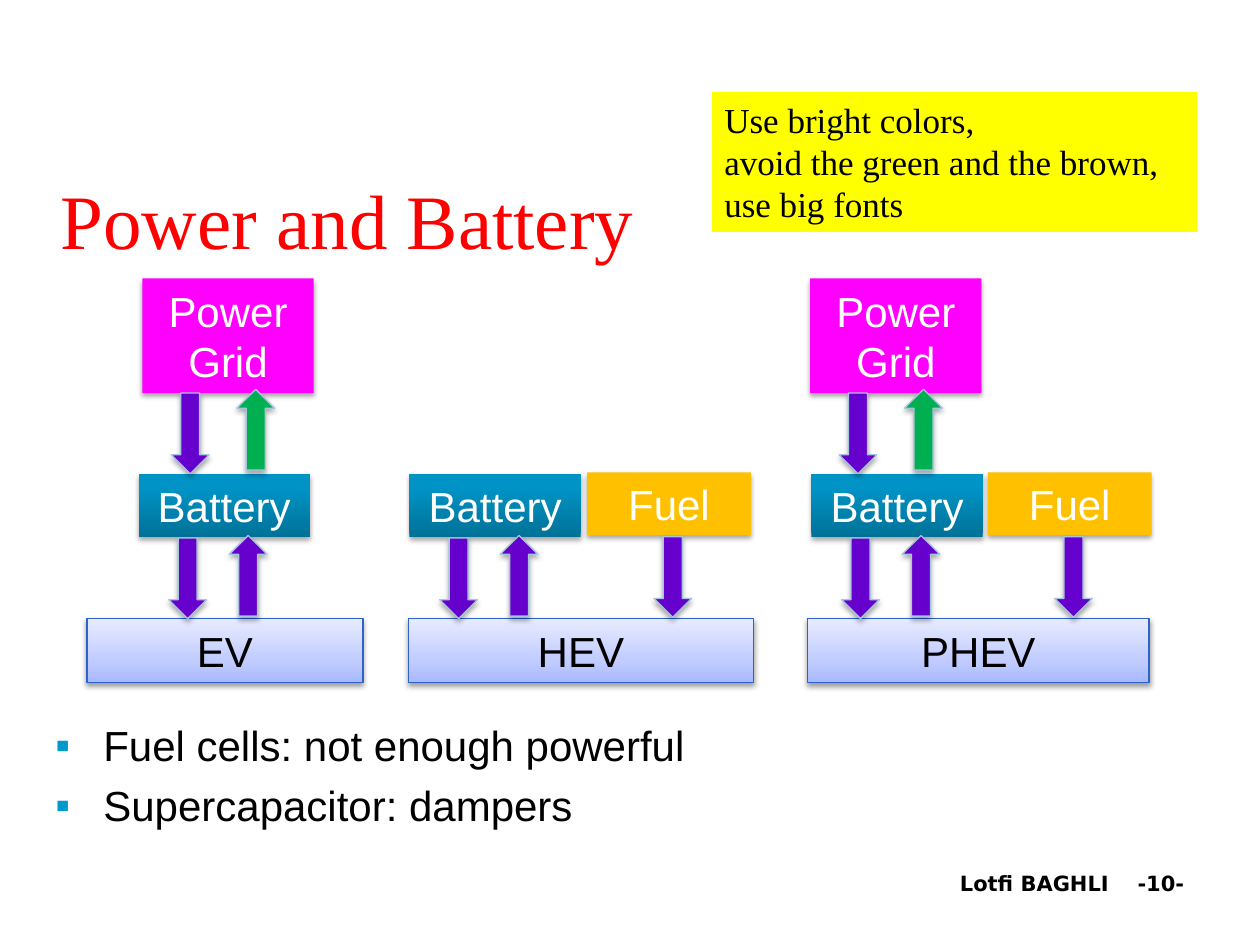
import copy

import pptx
import pptx.dml.color
import pptx.enum.shapes
import pptx.enum.text
import pptx.oxml
import pptx.oxml.ns
import pptx.util
from lxml import etree

RGB = pptx.dml.color.RGBColor
ALIGN = pptx.enum.text.PP_ALIGN
ANCHOR = pptx.enum.text.MSO_ANCHOR
SHAPE = pptx.enum.shapes.MSO_SHAPE
Pt = pptx.util.Pt
qn = pptx.oxml.ns.qn

BLACK = RGB(0x00, 0x00, 0x00)
WHITE = RGB(0xFF, 0xFF, 0xFF)
RED = RGB(0xFF, 0x00, 0x00)
YELLOW = RGB(0xFF, 0xFF, 0x00)
MAGENTA = RGB(0xFF, 0x00, 0xFF)
ORANGE = RGB(0xFF, 0xC0, 0x00)
PURPLE = RGB(0x66, 0x00, 0xCC)
GREEN = RGB(0x00, 0xB0, 0x50)
BULLET = RGB(0x00, 0x99, 0xCC)
BASE_EDGE = RGB(0x2E, 0x63, 0xCB)
ARROW_EDGE = RGB(0xA5, 0xC6, 0xDE)
TEAL = ((0, RGB(0x00, 0x72, 0x98)), (0.8, RGB(0x00, 0x94, 0xC6)),
        (1, RGB(0x00, 0x95, 0xC7)))
LAVENDER = ((0, RGB(0xA7, 0xB8, 0xFF)), (0.35, RGB(0xC1, 0xCC, 0xFF)),
            (1, RGB(0xE7, 0xEB, 0xFF)))

# The slide is a grid of 100 columns by 75 rows.
CELL = pptx.util.Inches(0.1)
COLS, ROWS = 100, 75

LABEL = {"name": "Arial", "size": Pt(24)}
TITLE = {"name": "Times New Roman", "size": Pt(44)}
NOTE = {"name": "Times New Roman", "size": Pt(20)}
FOOTER = {"name": "DejaVu Sans", "size": Pt(12), "bold": True}


def grid(*cells):
    return [round(c * CELL) for c in cells]


def put(sp, box):
    for name, value in zip(("left", "top", "width", "height"), grid(*box)):
        setattr(sp, name, value)


def write(sp, lines, font, color, align, anchor, gap=0):
    tf = sp.text_frame
    formats = {"word_wrap": True, "vertical_anchor": anchor,
               "auto_size": pptx.enum.text.MSO_AUTO_SIZE.NONE}
    for name, value in formats.items():
        setattr(tf, name, value)
    for i, line in enumerate(lines):
        p = tf.paragraphs[0] if i == 0 else tf.add_paragraph()
        p.alignment = align
        p.space_before = Pt(gap if i else 0)
        r = p.add_run()
        r.text = line
        for name, value in font.items():
            setattr(r.font, name, value)
        r.font.color.rgb = color
    return tf


def paint(sp, fill):
    """Fill with one colour, or with gradient stops that run upwards."""
    if isinstance(fill, RGB):
        sp.fill.solid()
        sp.fill.fore_color.rgb = fill
        return
    sp.fill.gradient()
    sp.fill.gradient_angle = 90
    stops = sp._element.spPr.find(".//" + qn("a:gsLst"))
    stops.append(copy.deepcopy(stops[0]))
    for stop, (position, color) in zip(sp.fill.gradient_stops, fill):
        stop.position = position
        stop.color.rgb = color


def cast_shadow(sp, alpha, distance):
    effects = sp._element.spPr.find(qn("a:effectLst"))
    shadow = etree.SubElement(effects, qn("a:outerShdw"), blurRad=str(Pt(3.1)),
                              dist=str(Pt(distance)), dir="5400000", rotWithShape="0")
    color = etree.SubElement(shadow, qn("a:srgbClr"), val=str(BLACK))
    etree.SubElement(color, qn("a:alpha"), val=str(alpha * 1000))


def add_block(s, kind, box, fill, edge=None, shadow=(35, 1.8)):
    sp = s.shapes.add_shape(kind, *grid(*box))
    paint(sp, fill)
    if edge is None:
        sp.line.fill.background()
    else:
        sp.line.color.rgb = edge
        sp.line.width = Pt(0.75)
    sp.shadow.inherit = False
    if shadow:
        cast_shadow(sp, *shadow)
    return sp


def add_label(s, box, text, fill, color=WHITE, **style):
    sp = add_block(s, SHAPE.RECTANGLE, box, fill, **style)
    write(sp, [text], LABEL, color, ALIGN.CENTER, ANCHOR.MIDDLE)


def add_arrow(s, x, y, up=False, fill=PURPLE):
    kind = SHAPE.UP_ARROW if up else SHAPE.DOWN_ARROW
    add_block(s, kind, (x, y, 3, 6.4), fill, ARROW_EDGE)


def add_vehicle(s, box, name, battery, power_grid=None, fuel=None):
    """Stack the sources over the vehicle bar; sources are columns from its left."""
    x, y, w, h = box
    bar = y + h - 5.1
    tier = bar - 11.5
    add_label(s, (x, bar, w, 5.1), name, LAVENDER, BLACK,
              edge=BASE_EDGE, shadow=(38, 1.6))
    add_label(s, (x + battery, tier, 13.6, 5), "Battery", TEAL)
    add_arrow(s, x + battery + 2.4, tier + 5.1)
    add_arrow(s, x + battery + 7.2, tier + 4.9, up=True)
    if fuel is not None:
        add_label(s, (x + fuel, tier - 0.1, 13, 5), "Fuel", ORANGE)
        add_arrow(s, x + fuel + 5.3, tier + 5)
    if power_grid is not None:
        add_label(s, (x + power_grid, y, 13.6, 9.1), "Power Grid", MAGENTA)
        add_arrow(s, x + power_grid + 2.3, y + 9.1)
        add_arrow(s, x + power_grid + 7.5, y + 8.8, up=True, fill=GREEN)


def add_title(s, box):
    sp = s.shapes.title
    put(sp, box)
    tf = write(sp, ["Power and Battery"], TITLE, RED, ALIGN.JUSTIFY, ANCHOR.TOP)
    tf.margin_top, = grid(1.2)


def add_bullets(s, box):
    sp = s.placeholders[1]
    put(sp, box)
    tf = write(sp, ["Fuel cells: not enough powerful", "Supercapacitor: dampers"],
               LABEL, BLACK, ALIGN.JUSTIFY, ANCHOR.TOP, gap=5.5)
    tf.margin_top, = grid(0.8)
    indent, = grid(3.8)
    for p in tf.paragraphs:
        pPr = p._p.get_or_add_pPr()
        pPr.set("marL", str(indent))
        pPr.set("indent", str(-indent))
        color = etree.SubElement(pPr, qn("a:buClr"))
        etree.SubElement(color, qn("a:srgbClr"), val=str(BULLET))
        etree.SubElement(pPr, qn("a:buFont"), typeface="Arial")
        etree.SubElement(pPr, qn("a:buChar"), char="▪")


def add_note(s, box):
    sp = add_block(s, SHAPE.RECTANGLE, box, YELLOW, shadow=None)
    write(sp, ["Use bright colors,", "avoid the green and the brown,", "use big fonts"],
          NOTE, BLACK, ALIGN.LEFT, ANCHOR.MIDDLE)


def add_footer(s, box):
    sp = s.shapes.add_textbox(*grid(*box))
    tf = write(sp, ["\tLotfi BAGHLI\t-10-"], FOOTER, BLACK, ALIGN.LEFT, ANCHOR.TOP)
    tabs = etree.SubElement(tf.paragraphs[0]._p.get_or_add_pPr(), qn("a:tabLst"))
    for stop in grid(18.7, 32.8):
        etree.SubElement(tabs, qn("a:tab"), pos=str(stop), algn="l")


def main():
    prs = pptx.Presentation()
    prs.slide_width, prs.slide_height = grid(COLS, ROWS)
    s = prs.slides.add_slide(prs.slide_layouts[1])
    add_title(s, (3.8, 12.5, 90, 8.1))
    add_vehicle(s, (6.9, 22.1, 21.9, 32.1), "EV", battery=4.1, power_grid=4.4)
    add_vehicle(s, (32.4, 22.1, 27.4, 32.1), "HEV", battery=0.1, fuel=14.2)
    add_vehicle(s, (64.1, 22.1, 27.1, 32.1), "PHEV", battery=0.3, power_grid=0.2, fuel=14.3)
    add_bullets(s, (3.4, 56.3, 87.9, 12.1))
    add_note(s, (56.5, 7.3, 38.5, 11.1))
    add_footer(s, (56.5, 68.6, 38.5, 4.9))
    prs.save("out.pptx")


if __name__ == "__main__":
    main()
